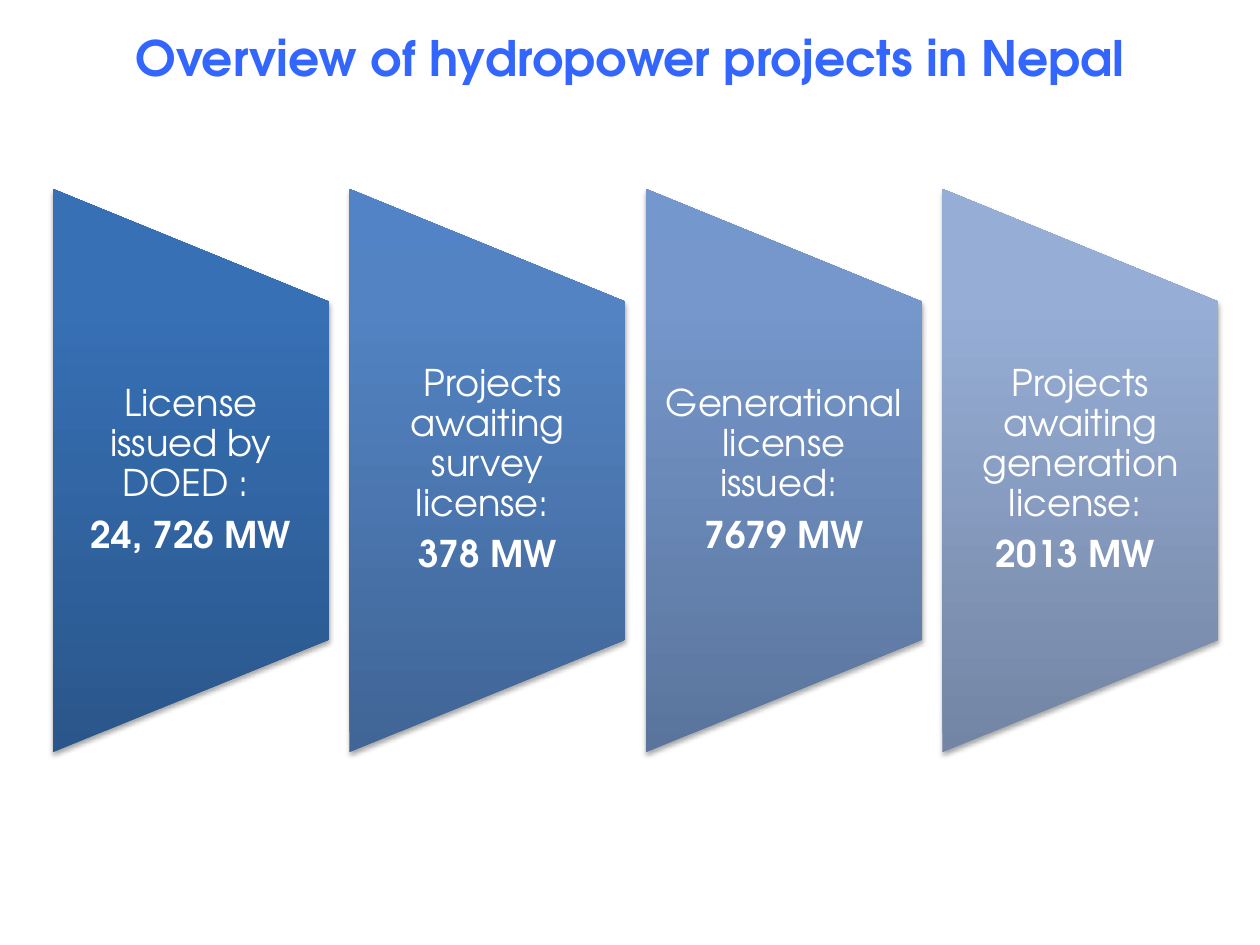
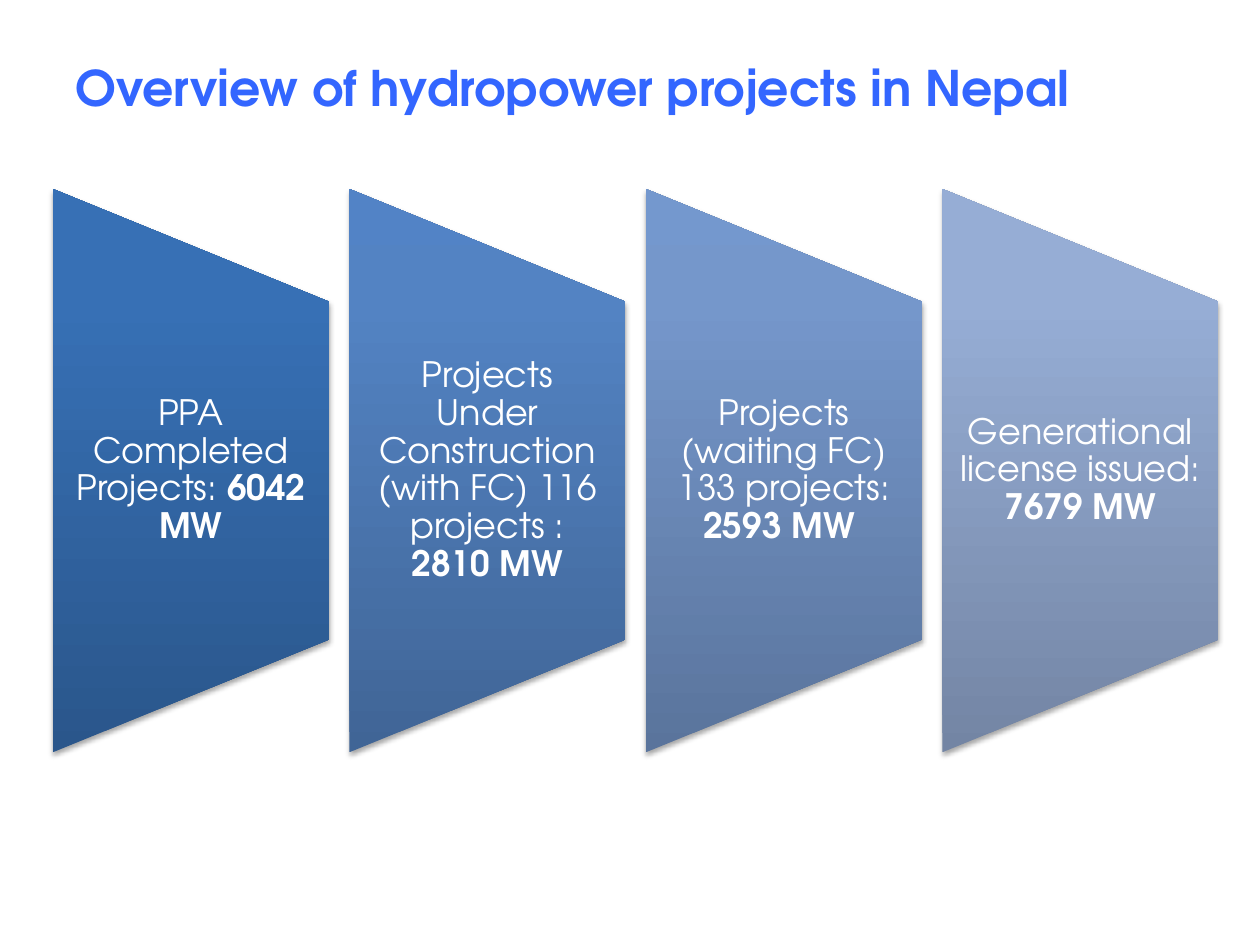
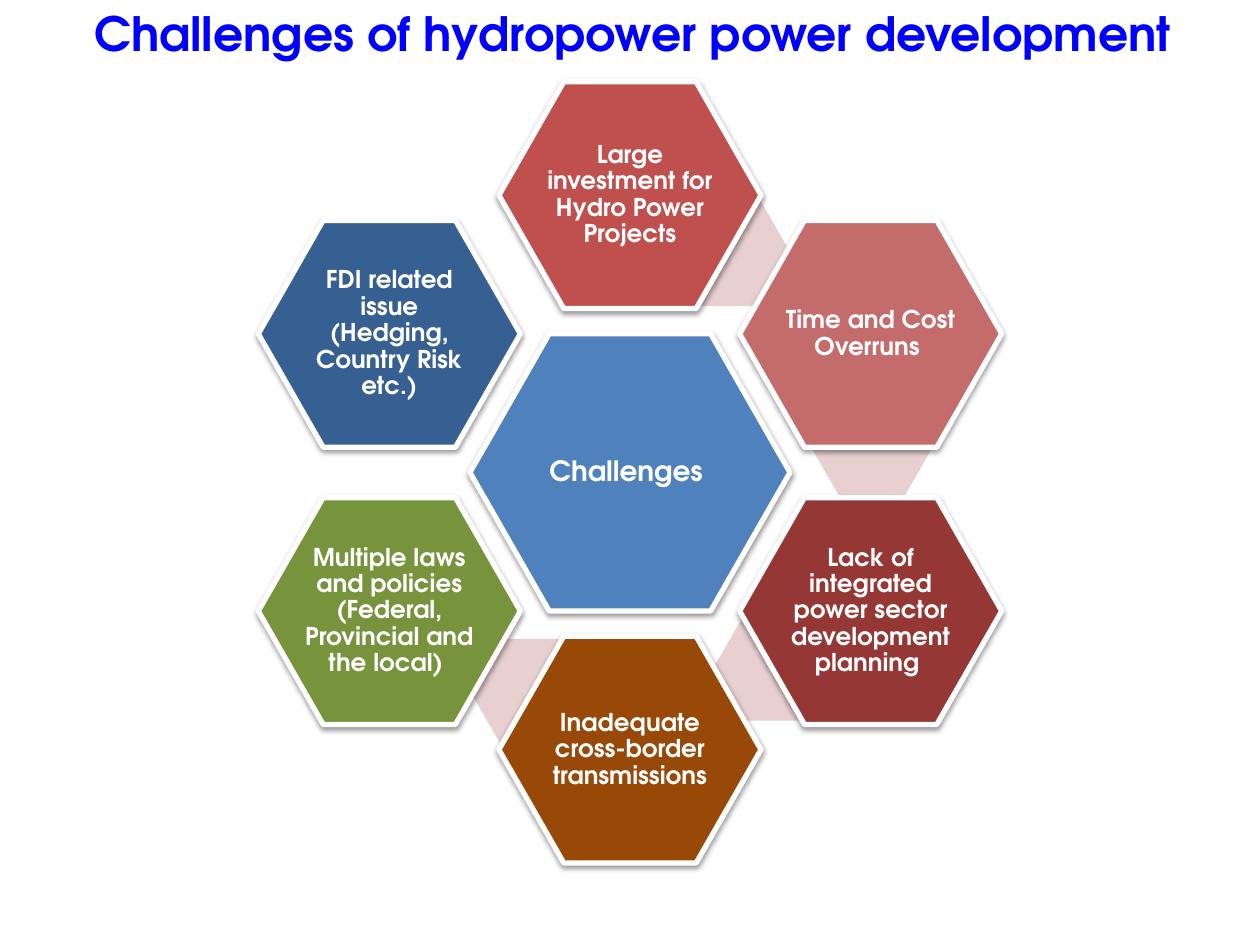
import lxml.etree
import pptx
import pptx.dml.color
import pptx.enum.shapes
import pptx.enum.text
import pptx.oxml.ns
import pptx.util

Inches = pptx.util.Inches
Pt = pptx.util.Pt
SHAPES = pptx.enum.shapes.MSO_SHAPE
ALIGN = pptx.enum.text.PP_ALIGN
ANCHOR = pptx.enum.text.MSO_ANCHOR

FONT = "TeX Gyre Adventor"
COLORS = {
    "white": "FFFFFF", "black": "000000",
    "title": "3366FF", "title_deep": "0000FF",
    "core": "4F81BD", "spacer": "E8D0D0",
    "red": "C0504D", "rose": "C46C6B", "maroon": "953735",
    "brown": "984807", "green": "77933C", "navy": "376092",
}
# Gradient colours of the four panels at 0, 80 and 100 percent
PANEL_GRADIENTS = [
    ("2A568B", "3770B5", "3570B8"),
    ("406596", "5383C3", "5283C6"),
    ("5A749C", "7597CB", "7498CE"),
    ("7385A4", "96ADD5", "95ADD7"),
]
OVERVIEW = "Overview of hydropower projects in Nepal"


def rgb(name):
    return pptx.dml.color.RGBColor.from_string(COLORS[name])


def set_all(target, values):
    for name, value in values.items():
        setattr(target, name, value)


def add_xml(parent, tag, **attributes):
    child = lxml.etree.SubElement(parent, pptx.oxml.ns.qn("a:" + tag))
    for name, value in attributes.items():
        child.set(name, str(value))
    return child


def add_shadow(shape, opacity, distance):
    effects = shape._element.spPr.find(pptx.oxml.ns.qn("a:effectLst"))
    shadow = add_xml(effects, "outerShdw", blurRad=Pt(3.1), dist=Pt(distance),
                     dir=5400000, rotWithShape=0)
    color = add_xml(shadow, "srgbClr", val=COLORS["black"])
    add_xml(color, "alpha", val=opacity * 1000)


def add_text(page, box, paragraphs, size, inset, color="white",
             anchor=ANCHOR.MIDDLE, align=ALIGN.CENTER, spacing=0.9):
    """Each paragraph is a list of (text, bold) spans."""
    frame = page.shapes.add_textbox(*map(Inches, box)).text_frame
    set_all(frame, {
        "word_wrap": True, "vertical_anchor": anchor,
        "margin_left": Inches(inset[0]), "margin_right": Inches(inset[0]),
        "margin_top": Inches(inset[1]), "margin_bottom": Inches(inset[1]),
    })
    for index, spans in enumerate(paragraphs):
        para = frame.add_paragraph() if index else frame.paragraphs[0]
        set_all(para, {"alignment": align, "line_spacing": spacing,
                       "space_after": Pt(round(0.35 * size))})
        for text, bold in spans:
            span = para.add_run()
            span.text = text
            set_all(span.font, {"name": FONT, "size": Pt(size), "bold": bold})
            span.font.color.rgb = rgb(color)


def add_title(page, box, text, size, color="title", align=ALIGN.CENTER):
    add_text(page, box, [[(text, True)]], size, (0.1, 0), color,
             ANCHOR.TOP, align, 1.0)


# Four tapering panels
def add_panel(page, box, gradient, paragraphs, size, inset):
    left, top, width, height = box
    # The preset lies on its side, so it is turned about the panel's centre
    shape = page.shapes.add_shape(
        SHAPES.FLOWCHART_MANUAL_OPERATION,
        Inches(left + (width - height) / 2), Inches(top + (height - width) / 2),
        Inches(height), Inches(width))
    shape.rotation = 270
    shape.shadow.inherit = False
    shape.line.fill.background()
    shape.fill.gradient()
    fill = shape._element.spPr.find(pptx.oxml.ns.qn("a:gradFill"))
    for child in list(fill):
        fill.remove(child)
    fill.set("rotWithShape", "0")
    stops = add_xml(fill, "gsLst")
    for percent, color in zip((0, 80, 100), gradient):
        add_xml(add_xml(stops, "gs", pos=percent * 1000), "srgbClr", val=color)
    add_xml(fill, "lin", ang=270 * 60000, scaled=0)
    add_shadow(shape, 35, 1.8)
    add_text(page, (left, top + height / 5, width, height * 0.6),
             paragraphs, size, (inset, 0))


def add_panels(page, box, panels, size, inset):
    left, top, width, height = box
    panel_width = 2.19
    step = (width - panel_width) / (len(panels) - 1)
    for index, (gradient, paragraphs) in enumerate(zip(PANEL_GRADIENTS, panels)):
        add_panel(page, (left + index * step, top, panel_width, height),
                  gradient, paragraphs, size, inset)


# Hexagon ring
def add_hexagon(page, box, color, adjustment):
    shape = page.shapes.add_shape(SHAPES.HEXAGON, *map(Inches, box))
    shape.adjustments[0] = adjustment
    shape.shadow.inherit = False
    shape.fill.solid()
    shape.fill.fore_color.rgb = rgb(color)
    shape.line.fill.background()
    return shape


def add_cell(page, center, extent, color, text, size):
    width, height = extent
    left, top = center[0] - width / 2, center[1] - height / 2
    shape = add_hexagon(page, (left, top, width, height), color, 0.286)
    shape.line.color.rgb = rgb("white")
    shape.line.width = Pt(3)
    add_shadow(shape, 38, 1.6)
    add_text(page, (left + width / 6, top + height / 6, width * 2 / 3, height * 2 / 3),
             [[(text, True)]], size, (0.02, 0.02))


def add_ring(page, center, cells):
    across, down = 1.91, 1.1
    add_cell(page, center, (2.54, 2.2), "core", "Challenges ", 16)
    for column, row, color, text, spacer in cells:
        if spacer:
            offset_x, offset_y = spacer
            add_hexagon(page, (center[0] + offset_x, center[1] + offset_y, 0.96, 0.83),
                        "spacer", 0.289)
        add_cell(page, (center[0] + column * across, center[1] + row * down),
                 (2.08, 1.8), color, text, 14)


def main():
    deck = pptx.Presentation()
    set_all(deck, {"slide_width": Inches(10), "slide_height": Inches(7.5)})
    licences, progress, challenges = [
        deck.slides.add_slide(deck.slide_layouts[6]) for _ in range(3)]
    panel_area = (0.42, 1.5, 9.25, 4.47)

    # Licences: label and figure in separate paragraphs
    figures = [
        ("License issued by DOED : ", "24, 726 MW"),
        (" Projects awaiting survey license: ", "378 MW"),
        ("Generational license issued: ", "7679 MW"),
        ("Projects awaiting generation license: ", "2013 MW "),
    ]
    add_panels(licences, panel_area,
               [[[(label, False)], [(figure, True)]] for label, figure in figures],
               21, 0.15)
    add_title(licences, (0.5, 0.22, 9, 1.03), OVERVIEW, 27.9)

    # Progress: label and figure in one paragraph
    figures = [
        ("PPA Completed Projects: ", "6042 MW"),
        ("Projects Under Construction (with FC) 116 projects : ", "2810 MW"),
        ("Projects (waiting FC) 133 projects: ", "2593 MW "),
        ("Generational license issued: ", "7679 MW"),
    ]
    add_panels(progress, panel_area,
               [[[(label, False), (figure, True)]] for label, figure in figures],
               20, 0.14)
    add_title(progress, (0.5, 0.46, 9, 1.09), OVERVIEW, 28, align=ALIGN.LEFT)

    # Challenges: column, row, colour, text, spacer offset from the centre
    add_ring(challenges, (5, 3.75), [
        (0, -2, "red", "Large investment for Hydro Power Projects", (0.32, -2.15)),
        (1, -1, "rose", "Time and Cost Overruns ", (1.44, -0.61)),
        (1, 1, "maroon", "Lack of integrated power sector development planning ",
         (0.66, 1.14)),
        (0, 2, "brown", "Inadequate cross-border transmissions", (-1.27, 1.32)),
        (-1, 1, "green",
         "Multiple laws and policies (Federal, Provincial and the local) ", None),
        (-1, -1, "navy", "FDI related issue (Hedging, Country Risk etc.)", None),
    ])
    add_title(challenges, (0.52, 0.03, 9, 1.22),
              "Challenges of hydropower power development", 27, "title_deep")

    deck.save("out.pptx")


if __name__ == "__main__":
    main()
